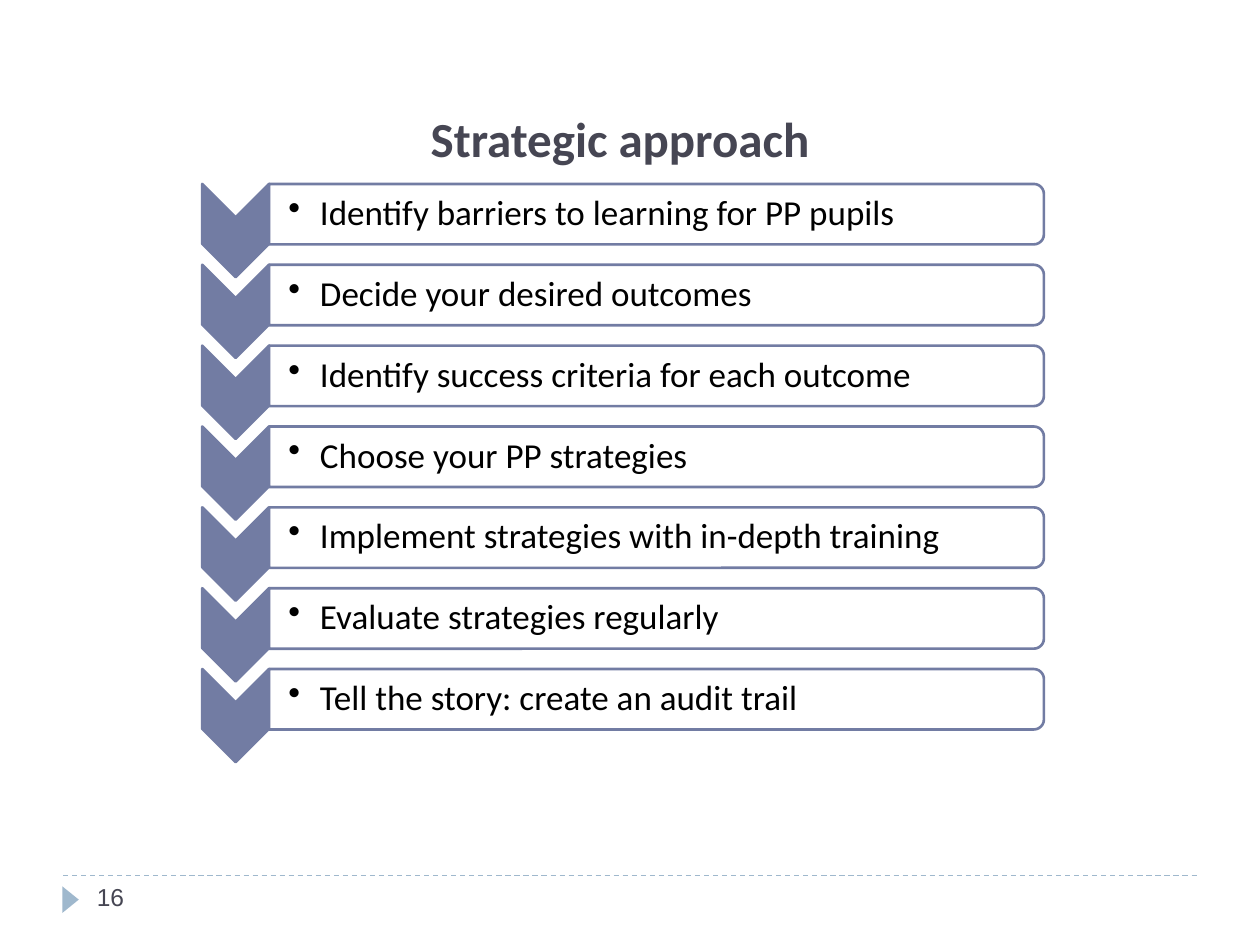
"""Build the strategic approach slide: a chevron list of seven steps."""
from lxml import etree
from pptx import Presentation
from pptx.dml.color import RGBColor
from pptx.enum.dml import MSO_LINE
from pptx.enum.shapes import MSO_CONNECTOR, MSO_SHAPE
from pptx.enum.text import MSO_ANCHOR, PP_ALIGN
from pptx.oxml.ns import qn
from pptx.util import Inches, Pt

CHEVRON, BAR, TRIANGLE = MSO_SHAPE.CHEVRON, MSO_SHAPE.ROUND_2_SAME_RECTANGLE, MSO_SHAPE.ISOSCELES_TRIANGLE
STRAIGHT, DASH = MSO_CONNECTOR.STRAIGHT, MSO_LINE.DASH
TOP, MIDDLE, BOTTOM = MSO_ANCHOR.TOP, MSO_ANCHOR.MIDDLE, MSO_ANCHOR.BOTTOM
LEFT, CENTER = PP_ALIGN.LEFT, PP_ALIGN.CENTER

TITLE = "Strategic approach"
STEPS = [
    "Identify barriers to learning for PP pupils",
    "Decide your desired outcomes",
    "Identify success criteria for each outcome",
    "Choose your PP strategies",
    "Implement strategies with in-depth training",
    "Evaluate strategies regularly",
    "Tell the story: create an audit trail",
]
PAGE = "16"
COLORS = {"ink": "464653", "accent": "727CA3", "rule": "9FB8CD", "bar": "FFFFFF", "text": "000000"}

WIDTH, HEIGHT = 10, 7.5
FIRST_Y, LAST_Y = 1.7, 5.55
PITCH = (LAST_Y - FIRST_Y) / (len(STEPS) - 1)
CHEVRON_X, CHEVRON_DROP, CHEVRON_SIZE = 1.87, 0.13, (0.74, 0.53)
BAR_X, BAR_SIZE = 5.21, (0.48, 6.15)
LABEL_X, LABEL_W, LABEL_H = 2.13, 6.13, 0.43
RULE_Y = 6.95


def rgb(name):
    return RGBColor.from_string(COLORS[name])


def write(sp, text, size, color="ink", font="Calibri", bold=False, align=LEFT,
          anchor=TOP, insets=(0.1, 0.05, 0.1, 0.05), bullet=False):
    tf = sp.text_frame
    tf.word_wrap = True
    tf.vertical_anchor = anchor
    tf.margin_left, tf.margin_top, tf.margin_right, tf.margin_bottom = map(Inches, insets)
    p = tf.paragraphs[0]
    p.alignment = align
    if bullet:
        p.line_spacing = 0.9
        p.space_after = Pt(3)
        pPr = p._p.get_or_add_pPr()
        pPr.set("marL", str(Inches(0.25)))
        pPr.set("indent", str(-Inches(0.25)))
        etree.SubElement(pPr, qn("a:buChar")).set("char", "•")
    r = p.add_run()
    r.text = text
    r.font.size, r.font.name, r.font.bold = Pt(size), font, bold
    r.font.color.rgb = rgb(color)


def turned(shapes, kind, cx, cy, size, fill, line=None):
    w, h = size
    sp = shapes.add_shape(kind, Inches(cx - w / 2), Inches(cy - h / 2), Inches(w), Inches(h))
    sp.rotation = 90
    sp.shadow.inherit = False
    sp.fill.solid()
    sp.fill.fore_color.rgb = rgb(fill)
    if line:
        sp.line.color.rgb = rgb(line)
        sp.line.width = Pt(1.5)
    else:
        sp.line.fill.background()
    return sp


def add_step(shapes, text, y):
    turned(shapes, CHEVRON, CHEVRON_X, y + CHEVRON_DROP, CHEVRON_SIZE, "accent", "accent")
    bar = turned(shapes, BAR, BAR_X, y, BAR_SIZE, "bar", "accent")
    color = bar.fill._xPr.find(qn("a:solidFill"))[0]
    etree.SubElement(color, qn("a:alpha")).set("val", "90000")
    label = shapes.add_textbox(Inches(LABEL_X), Inches(y - LABEL_H / 2), Inches(LABEL_W), Inches(LABEL_H))
    write(label, text, 20, color="text", anchor=MIDDLE, insets=(0.16, 0.01, 0.01, 0.01), bullet=True)


def add_footer(shapes):
    rule = shapes.add_connector(STRAIGHT, Inches(0.5), Inches(RULE_Y), Inches(WIDTH - 0.5), Inches(RULE_Y))
    rule.line.color.rgb = rgb("rule")
    rule.line.width = Pt(0.75)
    rule.line.dash_style = DASH
    etree.SubElement(rule._element.spPr, qn("a:effectLst"))
    turned(shapes, TRIANGLE, 0.56, 7.14, (0.21, 0.13), "rule")
    page = shapes.add_textbox(Inches(0.67), Inches(RULE_Y), Inches(2.17), Inches(0.4))
    write(page, PAGE, 14, font="Arial")


def main():
    prs = Presentation()
    prs.slide_width, prs.slide_height = Inches(WIDTH), Inches(HEIGHT)
    slide = prs.slides.add_slide(prs.slide_layouts[5])
    title = slide.shapes.title
    title.left, title.top, title.width, title.height = map(Inches, (1.22, 0.91, 7.4, 0.47))
    write(title, TITLE, 28, bold=True, align=CENTER, anchor=BOTTOM)
    add_footer(slide.shapes)
    steps = slide.shapes.add_group_shape().shapes
    for i, text in enumerate(STEPS):
        add_step(steps, text, FIRST_Y + i * PITCH)
    prs.save("out.pptx")


if __name__ == "__main__":
    main()
